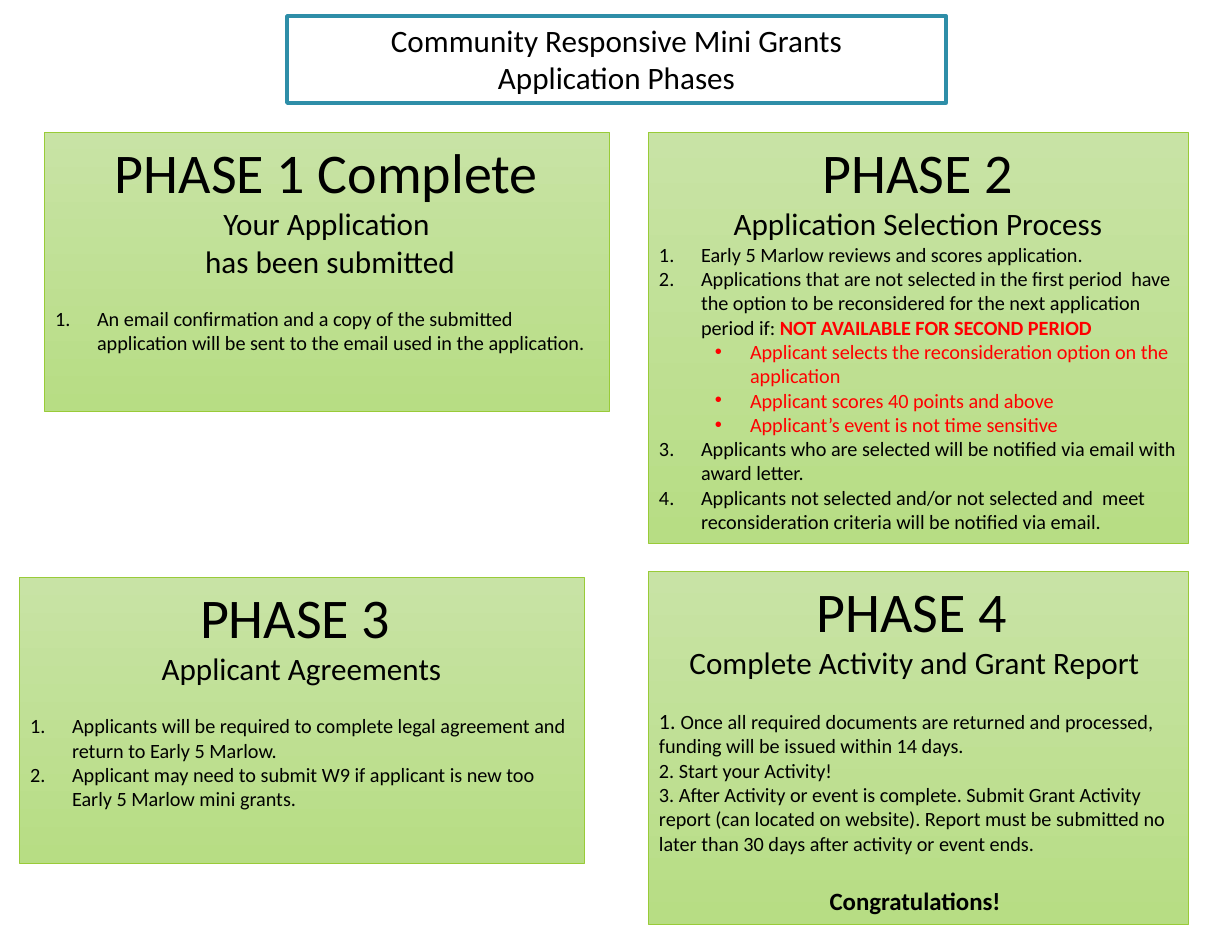
from dataclasses import dataclass

from lxml.etree import SubElement
from pptx import Presentation
from pptx.dml.color import RGBColor
from pptx.enum.shapes import MSO_SHAPE
from pptx.enum.text import MSO_ANCHOR, PP_ALIGN
from pptx.oxml.ns import qn
from pptx.util import Pt

SCALE = 914400 / 112  # EMU in one px
FONT = "Calibri"
HEX = {
    "text": "000000", "alert": "FF0000", "paper": "FFFFFF", "frame": "2E8EA8",
    "top": "C8E3A5", "base": "B7DD84", "edge": "99CB38",
}
INDENT = {"number": (42, 42), "bullet": (91, 35)}  # left margin, hanging


@dataclass(frozen=True)
class Line:
    text: str
    size: int = 13
    kind: str = "plain"  # plain, center, number or bullet
    color: str = "text"
    bold: bool = False
    gap: float = 0  # points above
    lead: str = ""  # larger opening words
    alert: str = ""  # bold red closing words


@dataclass(frozen=True)
class Box:
    left: int
    top: int
    width: int
    height: int
    lines: tuple[Line, ...]


def px(size: int) -> int:
    return round(size * SCALE)


def rgb(name: str) -> RGBColor:
    return RGBColor.from_string(HEX[name])


def head(text: str) -> Line:
    return Line(text, 36, "center")


def sub(text: str) -> Line:
    return Line(text, 20, "center")


def step(text: str, gap: float = 0, alert: str = "") -> Line:
    return Line(text, kind="number", gap=gap, alert=alert)


def point(text: str) -> Line:
    return Line(text, kind="bullet", color="alert")


def mark(para, kind: str) -> None:
    """Give a paragraph its number or bullet and hanging indent."""
    left, hang = INDENT[kind]
    props = para._p.get_or_add_pPr()
    props.set("marL", str(px(left)))
    props.set("indent", str(-px(hang)))
    SubElement(props, qn("a:buFont")).set("typeface", "Arial" if kind == "bullet" else "+mj-lt")
    if kind == "bullet":
        para.level = 1
        SubElement(props, qn("a:buChar")).set("char", "•")
    else:
        SubElement(props, qn("a:buAutoNum")).set("type", "arabicPeriod")


def write(para, line: Line) -> None:
    if line.kind in INDENT:
        mark(para, line.kind)
    para.alignment = PP_ALIGN.CENTER if line.kind == "center" else PP_ALIGN.LEFT
    para.space_before = Pt(line.gap)
    font = para.font
    font.name, font.size, font.bold = FONT, Pt(line.size), line.bold
    font.color.rgb = rgb(line.color)
    if line.lead:
        run = para.add_run()
        run.text, run.font.size = line.lead, Pt(14)
    para.add_run().text = line.text
    if line.alert:
        run = para.add_run()
        run.text, run.font.bold = line.alert, True
        run.font.color.rgb = rgb("alert")


def draw(slide, box: Box, edge: str, weight: float):
    shape = slide.shapes.add_shape(
        MSO_SHAPE.RECTANGLE, px(box.left), px(box.top), px(box.width), px(box.height))
    shape.shadow.inherit = False
    shape.line.color.rgb = rgb(edge)
    shape.line.width = Pt(weight)
    frame = shape.text_frame
    frame.word_wrap = True
    frame.vertical_anchor = MSO_ANCHOR.TOP
    for i, line in enumerate(box.lines):
        write(frame.add_paragraph() if i else frame.paragraphs[0], line)
    return shape


def phase(slide, box: Box) -> None:
    fill = draw(slide, box, "edge", 0.5).fill
    fill.gradient()
    fill.gradient_angle = 270
    for stop, name in zip(fill.gradient_stops, ("top", "base")):
        stop.color.rgb = rgb(name)


TITLE = Box(287, 16, 659, 87, (
    sub("Community Responsive Mini Grants"),
    sub("Application Phases"),
))

PHASES = (
    Box(44, 132, 565, 279, (
        head("PHASE 1 Complete"),
        sub("Your Application"),
        sub(" has been submitted"),
        step("An email confirmation and a copy of the submitted application will be "
             "sent to the email used in the application.", gap=17),
    )),
    Box(648, 132, 540, 411, (
        head("PHASE 2"),
        sub("Application Selection Process"),
        step("Early 5 Marlow reviews and scores application."),
        step("Applications that are not selected in the first period  have the option "
             "to be reconsidered for the next application period if: ",
             alert="NOT AVAILABLE FOR SECOND PERIOD"),
        point("Applicant selects the reconsideration option on the application"),
        point("Applicant scores 40 points and above"),
        point("Applicant’s event is not time sensitive"),
        step("Applicants who are selected will be notified via email with award letter."),
        step("Applicants not selected and/or not selected and  meet reconsideration "
             "criteria will be notified via email."),
    )),
    Box(19, 577, 565, 286, (
        head("PHASE 3 "),
        sub("Applicant Agreements"),
        step("Applicants will be required to complete legal agreement and return to "
             "Early 5 Marlow.", gap=17),
        step("Applicant may need to submit W9 if applicant is new too "
             "Early 5 Marlow mini grants."),
    )),
    Box(648, 571, 540, 353, (
        head("PHASE 4 "),
        sub("Complete Activity and Grant Report "),
        Line("Once all required documents are returned and processed, funding will be "
             "issued within 14 days.", gap=17, lead="1. "),
        Line("2. Start your Activity!"),
        Line("3. After Activity or event is complete. Submit Grant Activity report (can "
             "located on website). Report must be submitted no later than 30 days after "
             "activity or event ends."),
        Line("Congratulations! ", 16, "center", bold=True, gap=19.5),
    )),
)


def main() -> None:
    deck = Presentation()
    deck.slide_width, deck.slide_height = px(1232), px(952)
    slide = deck.slides.add_slide(deck.slide_layouts[6])

    # Phase boxes
    for box in PHASES:
        phase(slide, box)

    # Framed title
    fill = draw(slide, TITLE, "frame", 2.25).fill
    fill.solid()
    fill.fore_color.rgb = rgb("paper")

    deck.save("out.pptx")


if __name__ == "__main__":
    main()
